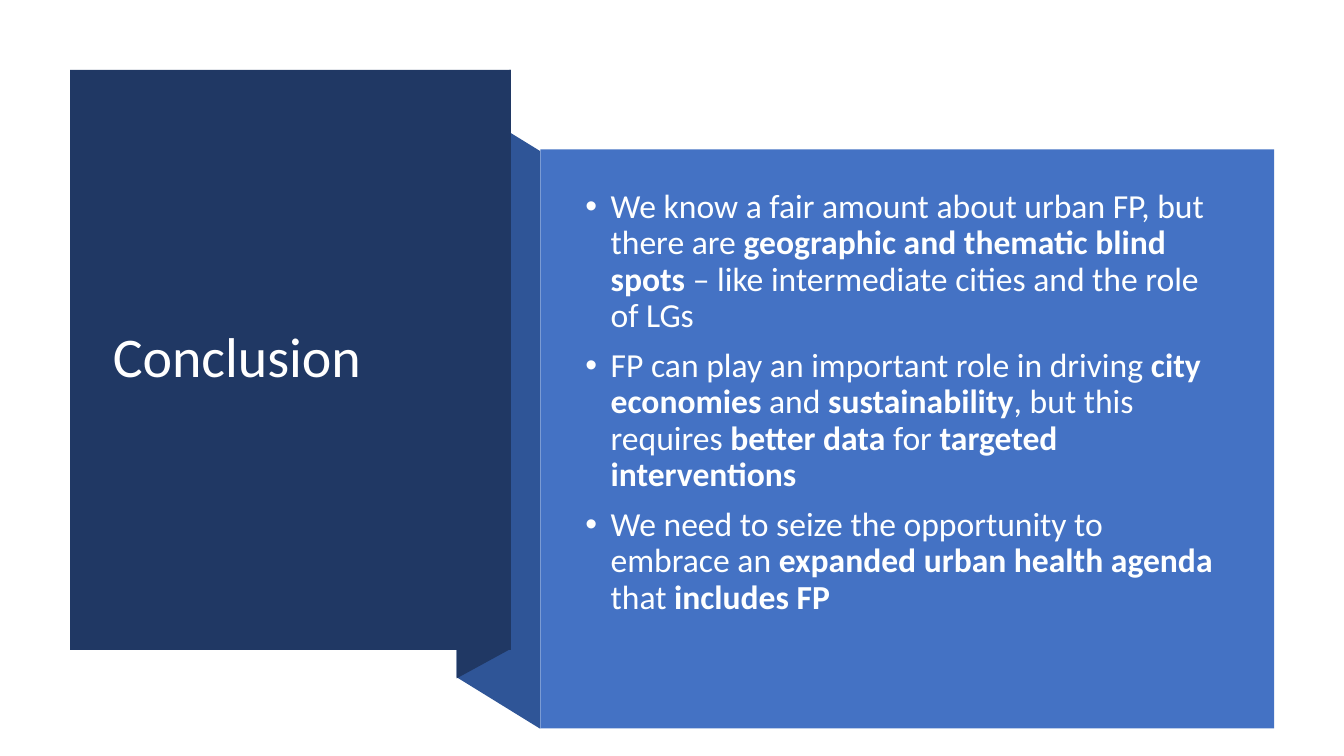
from lxml import etree
from pptx import Presentation
from pptx.dml.color import RGBColor
from pptx.enum.shapes import MSO_SHAPE
from pptx.enum.text import MSO_ANCHOR, MSO_AUTO_SIZE, PP_ALIGN
from pptx.oxml.ns import qn
from pptx.util import Pt

RECT = MSO_SHAPE.RECTANGLE
MIDDLE = MSO_ANCHOR.MIDDLE
NO_FIT = MSO_AUTO_SIZE.NONE
LEFT = PP_ALIGN.LEFT

NAVY, FOLD_BLUE, BLUE = "203864", "2F5597", "4472C4"
WHITE, OFF_WHITE = "FFFFFF", "FEFFFF"
FONT = "Calibri"

# Ribbon outlines, in points
BACK_FOLD = [(385.9, 520.6), (326.2, 483.8), (326.2, 71.3), (385.9, 108)]
FRONT_FOLD = [(364.5, 463.7), (326.2, 484.6), (326.2, 70.6), (364.5, 49.7)]

# Each point is a list of (text, bold) runs
POINTS = [
    [("We know a fair amount about urban FP, but there are ", False),
     ("geographic and thematic blind spots ", True),
     ("– like intermediate cities and the role of LGs", False)],
    [("FP can play an important role in driving ", False),
     ("city economies ", True), ("and ", False), ("sustainability", True),
     (", but this requires ", False), ("better data ", True),
     ("for ", False), ("targeted interventions", True)],
    [("We need to seize the opportunity to embrace an ", False),
     ("expanded urban health agenda ", True), ("that ", False),
     ("includes FP", True)],
]


def rgb(value):
    return RGBColor.from_string(value)


def set_attrs(obj, values):
    for name, value in values.items():
        setattr(obj, name, value)


def paint(sp, color):
    sp.shadow.inherit = False
    sp.fill.solid()
    sp.fill.fore_color.rgb = rgb(color)
    sp.line.fill.background()


def add_outline(s, points, color):
    corners = [(Pt(x), Pt(y)) for x, y in points]
    builder = s.shapes.build_freeform(*corners[0], scale=1.0)
    builder.add_line_segments(corners[1:], close=True)
    paint(builder.convert_to_shape(), color)


def add_panel(s, left, top, width, height, color):
    sp = s.shapes.add_shape(RECT, Pt(left), Pt(top), Pt(width), Pt(height))
    paint(sp, color)


def add_run(p, text, size, color, bold=False):
    r = p.add_run()
    r.text = text
    set_attrs(r.font, {"name": FONT, "size": Pt(size), "bold": bold})
    r.font.color.rgb = rgb(color)


def set_bullet(p, indent):
    pPr = p._p.get_or_add_pPr()
    pPr.set("marL", str(Pt(indent)))
    pPr.set("indent", str(-Pt(indent)))
    etree.SubElement(pPr, qn("a:buFont")).set("typeface", "Arial")
    etree.SubElement(pPr, qn("a:buChar")).set("char", "•")


def place_title(s, text):
    title = s.shapes.title
    set_attrs(title, {"left": Pt(73.4), "top": Pt(77), "width": Pt(267.1),
                      "height": Pt(359.3)})
    tf = title.text_frame
    set_attrs(tf, {"word_wrap": True, "auto_size": NO_FIT,
                   "vertical_anchor": MIDDLE})
    p = tf.paragraphs[0]
    set_attrs(p, {"alignment": LEFT, "line_spacing": 0.9})
    add_run(p, text, 40, WHITE)
    # Bring the title in front of the ribbon
    s.shapes._spTree.append(title._element)


def add_bullets(s, left, top, width, height, points):
    box = s.shapes.add_textbox(Pt(left), Pt(top), Pt(width), Pt(height))
    tf = box.text_frame
    # The deep bottom margin lifts the centred text
    set_attrs(tf, {"word_wrap": True, "auto_size": NO_FIT,
                   "vertical_anchor": MIDDLE, "margin_bottom": Pt(40)})
    for i, runs in enumerate(points):
        p = tf.add_paragraph() if i else tf.paragraphs[0]
        set_attrs(p, {"alignment": LEFT, "line_spacing": 0.9,
                      "space_before": Pt(10)})
        set_bullet(p, 18)
        for text, bold in runs:
            add_run(p, text, 24, OFF_WHITE, bold)


def main():
    prs = Presentation()
    set_attrs(prs, {"slide_width": Pt(960), "slide_height": Pt(540)})
    s = prs.slides.add_slide(prs.slide_layouts[5])

    # Folded ribbon with the title panel
    add_outline(s, BACK_FOLD, FOLD_BLUE)
    add_outline(s, FRONT_FOLD, NAVY)
    add_panel(s, 50, 50, 315, 414.2, NAVY)
    place_title(s, "Conclusion")

    # Text panel
    add_panel(s, 385.9, 106.6, 524.2, 413.6, BLUE)
    add_bullets(s, 411.1, 135.4, 468.7, 341.3, POINTS)

    prs.save("out.pptx")


if __name__ == "__main__":
    main()
